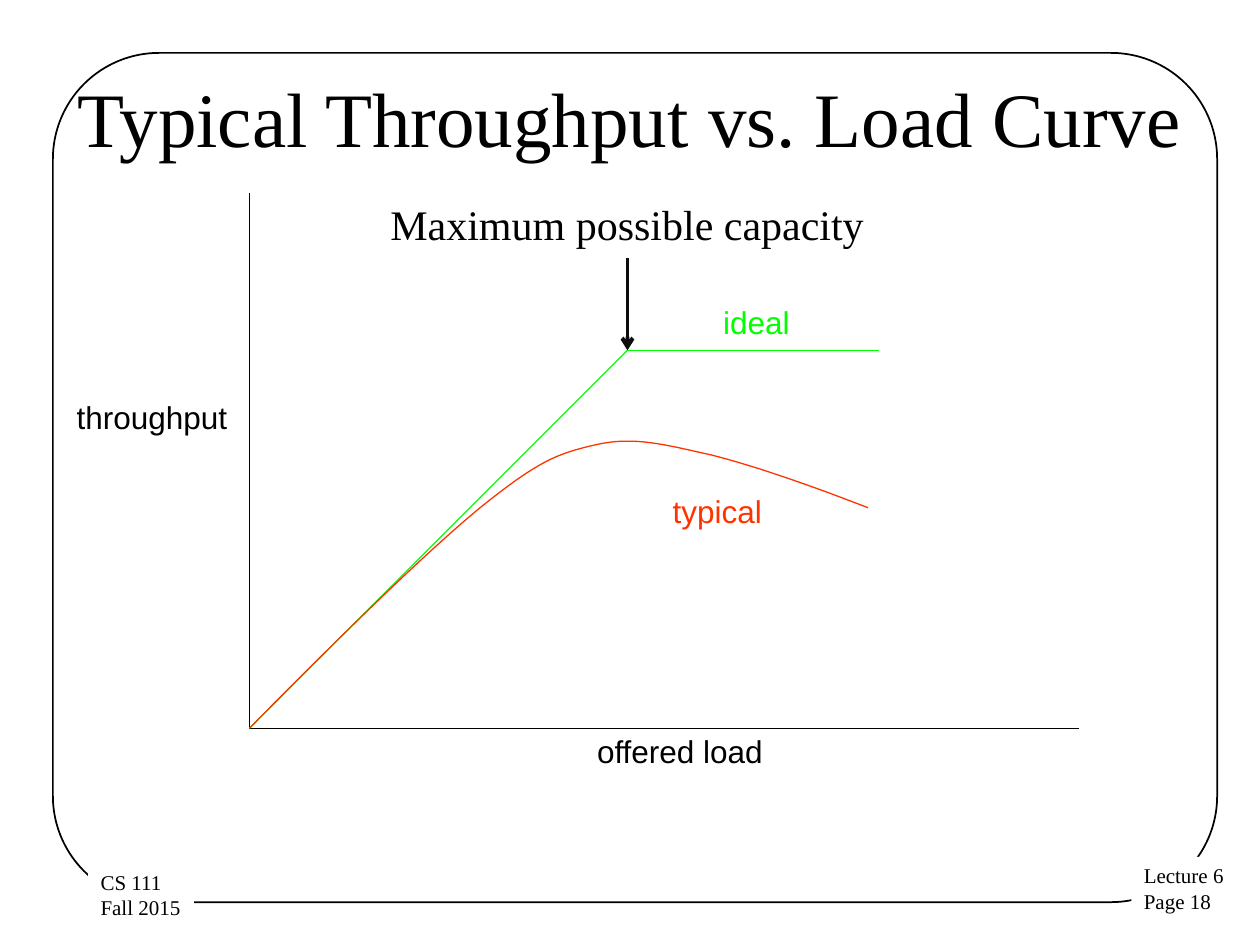
from dataclasses import dataclass

from lxml import etree
from pptx import Presentation
from pptx.dml.color import RGBColor
from pptx.enum import shapes as sh, text as tx
from pptx.oxml import ns
from pptx.util import Inches, Pt

COLORS = {
    "black": "000000",
    "white": "FFFFFF",
    "ideal": "00FF00",
    "typical": "FF3300",
    "arrow": "0D0D0D",
}
SERIF, SANS = "Times New Roman", "Arial"

Point = tuple[float, float]


@dataclass
class Label:
    lines: list[str]
    left: float
    top: float
    width: float
    height: float
    size: int = 18
    font: str = SANS
    color: str = "black"
    fill: str | None = None


@dataclass
class Line:
    start: Point
    end: Point
    color: str = "black"
    width: float = 0.75
    arrow: bool = False


ORIGIN, KNEE = (1.98, 5.78), (4.98, 2.78)

LINES = [
    Line((1.98, 1.53), ORIGIN),
    Line(ORIGIN, (8.56, 5.78)),
    Line(ORIGIN, KNEE, "ideal"),
    Line(KNEE, (6.98, 2.78), "ideal"),
]
POINTER = Line((4.98, 2.05), KNEE, "arrow", 2.25, True)

# Each piece holds two control points and an end point.
CURVE = [
    ((2.66, 5.09), (3.35, 4.41), (3.81, 4.03)),
    ((4.27, 3.66), (4.42, 3.6), (4.73, 3.53)),
    ((5.03, 3.46), (5.28, 3.53), (5.64, 3.61)),
    ((6, 3.7), (6.45, 3.86), (6.89, 4.03)),
]

FOOTERS = [
    Label(["Lecture 6", "Page 18"], 8.98, 6.8, 0.84, 0.51, 12, SERIF, fill="white"),
    Label(["CS 111", "Fall 2015"], 0.7, 6.85, 0.84, 0.51, 12, SERIF, fill="white"),
]
LABELS = [
    Label(["throughput"], 0.51, 3.11, 1.4, 0.43),
    Label(["offered load"], 4.64, 5.76, 1.67, 0.43),
    Label(["ideal"], 5.64, 2.36, 0.79, 0.43, color="ideal"),
    Label(["typical"], 5.24, 3.86, 0.99, 0.43, color="typical"),
    Label(["Maximum possible capacity"], 3, 1.53, 4, 0.5, 24, SERIF),
]
TITLE = Label(["Typical Throughput vs. Load Curve"], 0.5, 0.3, 9, 1.25, 44, SERIF)


def rgb(name: str) -> RGBColor:
    return RGBColor.from_string(COLORS[name])


def add_label(slide, label: Label):
    box = slide.shapes.add_textbox(
        *map(Inches, (label.left, label.top, label.width, label.height)))
    if label.fill:
        box.fill.solid()
        box.fill.fore_color.rgb = rgb(label.fill)
    frame = box.text_frame
    frame.text = "\n".join(label.lines)
    frame.word_wrap = False
    frame.auto_size = tx.MSO_AUTO_SIZE.SHAPE_TO_FIT_TEXT
    for para in frame.paragraphs:
        para.font.size = Pt(label.size)
        para.font.name = label.font
        para.font.color.rgb = rgb(label.color)
    return frame


def add_title(slide, label: Label) -> None:
    frame = add_label(slide, label)
    frame.word_wrap = True
    frame.auto_size = tx.MSO_AUTO_SIZE.NONE
    frame.vertical_anchor = tx.MSO_ANCHOR.MIDDLE
    frame.paragraphs[0].alignment = tx.PP_ALIGN.CENTER


def add_line(slide, line: Line) -> None:
    link = slide.shapes.add_connector(
        sh.MSO_CONNECTOR.STRAIGHT, *map(Inches, line.start + line.end))
    link.line.color.rgb = rgb(line.color)
    link.line.width = Pt(line.width)
    if line.arrow:
        etree.SubElement(link.line._get_or_add_ln(), ns.qn("a:tailEnd"), type="arrow")
    etree.SubElement(link._element.spPr, ns.qn("a:effectLst"))


def add_frame(slide) -> None:
    frame = slide.shapes.add_shape(
        sh.MSO_SHAPE.ROUNDED_RECTANGLE, *map(Inches, (0.42, 0.42, 9.24, 6.74)))
    frame.adjustments[0] = 0.125
    frame.shadow.inherit = False
    frame.fill.background()
    frame.line.color.rgb = rgb("black")
    frame.line.width = Pt(1)


def trace(start: Point, pieces: list, steps: int = 16) -> list[Point]:
    """Sample points along a chain of cubic Bézier pieces."""
    dots = []
    for one, two, end in pieces:
        for step in range(1, steps + 1):
            t = step / steps
            s = 1 - t
            dots.append(tuple(
                s**3 * a + 3 * s * s * t * b + 3 * s * t * t * c + t**3 * d
                for a, b, c, d in zip(start, one, two, end)))
        start = end
    return dots


def add_curve(slide) -> None:
    dots = [(Inches(x), Inches(y)) for x, y in trace(ORIGIN, CURVE)]
    pen = slide.shapes.build_freeform(*map(Inches, ORIGIN))
    pen.add_line_segments(dots, close=False)
    curve = pen.convert_to_shape()
    curve.shadow.inherit = False
    curve.fill.background()
    curve.line.color.rgb = rgb("typical")
    curve.line.width = Pt(0.75)


def main() -> None:
    deck = Presentation()
    deck.slide_width, deck.slide_height = Inches(10), Inches(7.5)
    slide = deck.slides.add_slide(deck.slide_layouts[6])
    add_frame(slide)
    for label in FOOTERS:
        add_label(slide, label)
    add_title(slide, TITLE)
    for line in LINES:
        add_line(slide, line)
    add_curve(slide)
    add_line(slide, POINTER)
    for label in LABELS:
        add_label(slide, label)
    deck.save("out.pptx")


if __name__ == "__main__":
    main()
